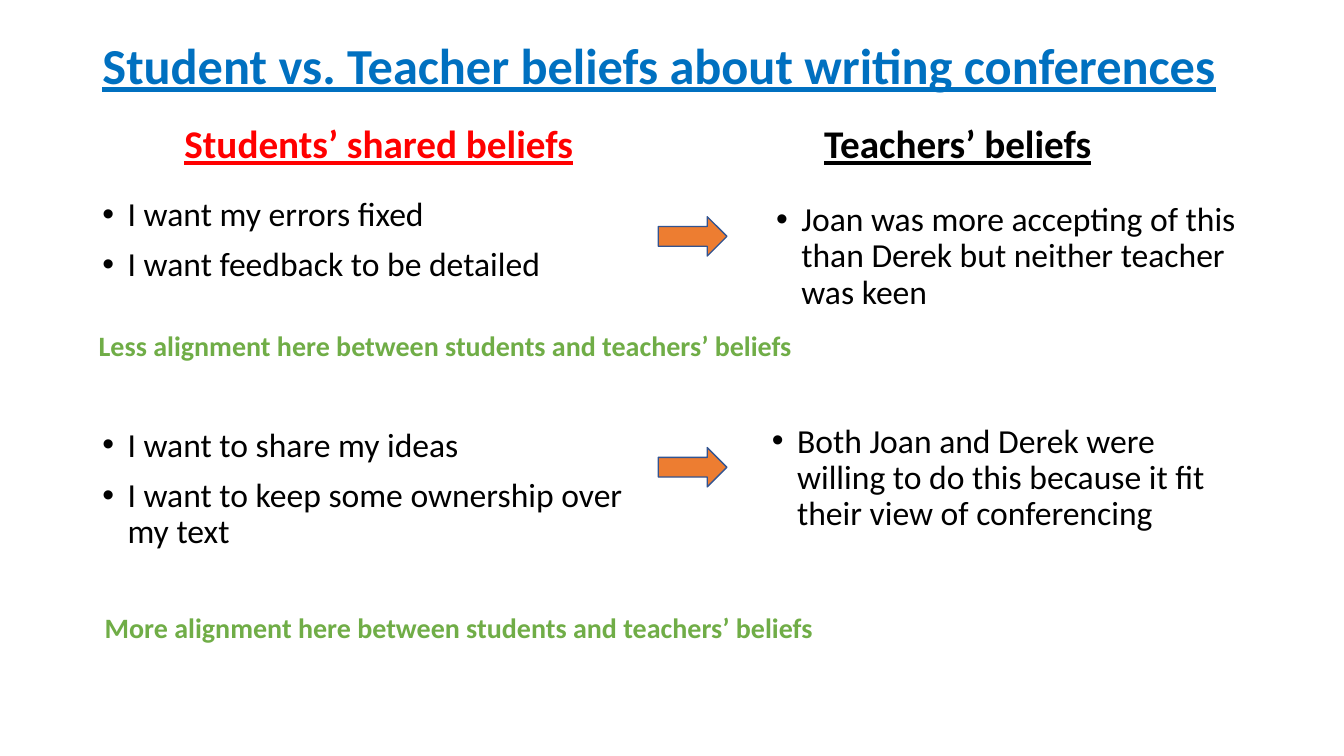
import pptx
import pptx.util
import pptx.dml.color
import pptx.enum.shapes
import pptx.enum.text
import pptx.oxml.ns
import lxml.etree

Pt = pptx.util.Pt
Align = pptx.enum.text.PP_ALIGN
Anchor = pptx.enum.text.MSO_ANCHOR
AutoSize = pptx.enum.text.MSO_AUTO_SIZE
RGB = pptx.dml.color.RGBColor

COLOURS = {
    "title": "0070C0",
    "students": "FF0000",
    "text": "000000",
    "alignment": "70AD47",
    "arrow": "ED7D31",
    "outline": "325491",
}


def write(box, place, lines, size, colour, anchor=Anchor.TOP, bold=False, underline=False):
    box.left, box.top, box.width, box.height = [Pt(length) for length in place]
    frame = box.text_frame
    frame.text = "\n".join(lines)
    frame.word_wrap = True
    frame.auto_size = AutoSize.NONE
    frame.vertical_anchor = anchor
    for para in frame.paragraphs:
        para.alignment = Align.LEFT
        para.line_spacing = 0.9
        para.space_before = Pt(0)
        for span in para.runs:
            span.font.name = "Calibri"
            span.font.size = Pt(size)
            span.font.bold = bold
            span.font.underline = underline
            span.font.color.rgb = RGB.from_string(COLOURS[colour])


def write_bullets(box, place, lines):
    write(box, place, lines, 24, "text")
    for para in box.text_frame.paragraphs:
        para.space_before = Pt(10)
        properties = para._p.get_or_add_pPr()
        properties.set("marL", str(Pt(18)))
        properties.set("indent", str(Pt(-18)))
        font = lxml.etree.SubElement(properties, pptx.oxml.ns.qn("a:buFont"))
        font.set("typeface", "Arial")
        bullet = lxml.etree.SubElement(properties, pptx.oxml.ns.qn("a:buChar"))
        bullet.set("char", "•")


deck = pptx.Presentation()
deck.slide_width, deck.slide_height = Pt(960), Pt(540)
page = deck.slides.add_slide(deck.slide_layouts.get_by_name("Comparison"))
title, students_heading, students_list, teachers_heading, teachers_list = page.placeholders

write(title, (66, 28.8, 828, 40.3), ["Student vs. Teacher beliefs about writing conferences"],
      36, "title", Anchor.MIDDLE, True, True)

headings = [
    (students_heading, 67.5, 406, "Students’ shared beliefs", "students"),
    (teachers_heading, 480, 408.2, "Teachers’ beliefs", "text"),
]
for heading, left, width, words, colour in headings:
    write(heading, (left, 91.4, width, 31.7), [words], 28, colour, Anchor.BOTTOM, True, True)
    heading.text_frame.paragraphs[0].alignment = Align.CENTER
    heading.text_frame.paragraphs[0].space_before = Pt(10)

students_ideas = page.shapes.add_textbox(0, 0, 0, 0)
teachers_ideas = page.shapes.add_textbox(0, 0, 0, 0)
beliefs = [
    (students_list, (66, 137.5, 406, 86.4),
     ["I want my errors fixed", "I want feedback to be detailed"]),
    (teachers_list, (547.2, 141.1, 343.4, 82),
     ["Joan was more accepting of this than Derek but neither teacher was keen"]),
    (students_ideas, (66, 302.4, 406, 108),
     ["I want to share my ideas", "I want to keep some ownership over my text"]),
    (teachers_ideas, (544.3, 299.5, 343.4, 86.4),
     ["Both Joan and Derek were willing to do this because it fit their view of conferencing"]),
]
for box, place, lines in beliefs:
    write_bullets(box, place, lines)

for amount, left, top in [("Less", 63.4, 231.1), ("More", 67.7, 432.7)]:
    box = page.shapes.add_textbox(0, 0, 0, 0)
    write(box, (left, top, 773.3, 31.7),
          [f"{amount} alignment here between students and teachers’ beliefs"],
          20, "alignment", bold=True)
    box.text_frame.paragraphs[0].line_spacing = 1.0
    box.text_frame.auto_size = AutoSize.SHAPE_TO_FIT_TEXT

for top in (154.8, 319.7):
    arrow = page.shapes.add_shape(pptx.enum.shapes.MSO_SHAPE.RIGHT_ARROW,
                                  Pt(470.2), Pt(top), Pt(49), Pt(28.1))
    arrow.shadow.inherit = False
    arrow.fill.solid()
    arrow.fill.fore_color.rgb = RGB.from_string(COLOURS["arrow"])
    arrow.line.color.rgb = RGB.from_string(COLOURS["outline"])
    arrow.line.width = Pt(1)

deck.save("out.pptx")
